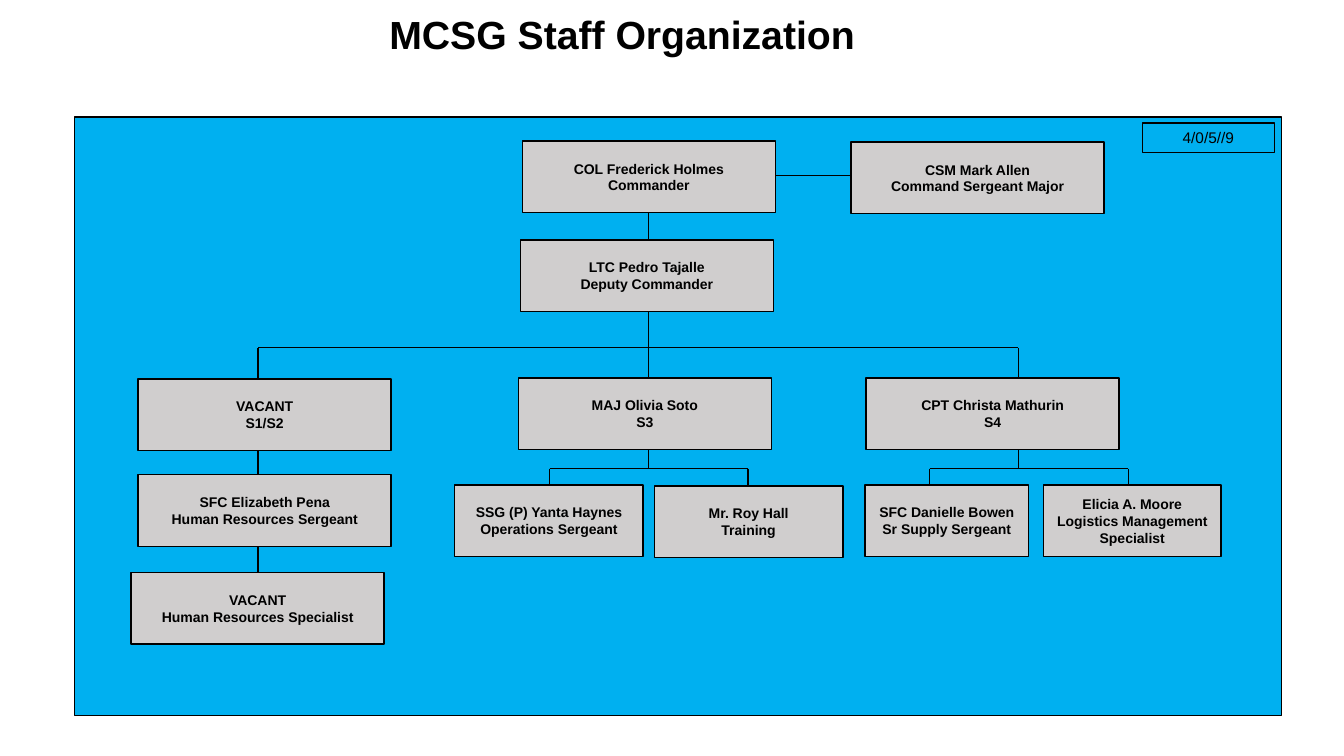
from lxml import etree
from pptx import Presentation
from pptx.dml.color import RGBColor
from pptx.enum.shapes import MSO_CONNECTOR, MSO_SHAPE
from pptx.enum.text import MSO_ANCHOR, PP_ALIGN
from pptx.oxml.ns import qn
from pptx.util import Inches, Pt

RECTANGLE = MSO_SHAPE.RECTANGLE
STRAIGHT = MSO_CONNECTOR.STRAIGHT
CENTER = PP_ALIGN.CENTER
MIDDLE, TOP = MSO_ANCHOR.MIDDLE, MSO_ANCHOR.TOP

COLORS = {"ink": "000000", "panel": "00B0F0", "box": "D0CECE"}
FORMATS = {
    "title": {"name": "Arial", "size": Pt(28), "bold": True},
    "box": {"name": "Arial", "size": Pt(10), "bold": True},
    "date": {"name": "Arial", "size": Pt(11), "bold": False},
}
BOX_WIDTH, BOX_HEIGHT = 2.51, 0.71
TITLE_BOX = (0, 0, 12.34, 0.67)
PANEL_BOX = (0.74, 1.16, 11.97, 5.94)

# Positions below are measured from the panel's top left corner
TRUNK_TOP, BRANCH_TOP, BRANCH_BOTTOM = 2.29, 3.49, 3.65
S1_AXIS, S3_AXIS, S4_AXIS = 1.82, 5.69, 9.36
BRANCHES = [(4.71, 6.68), (8.48, 10.45)]
STAFF = [  # left, top, width, lines
    (4.44, 0.24, BOX_WIDTH, ["COL Frederick Holmes", "Commander"]),
    (4.42, 1.22, BOX_WIDTH, ["LTC Pedro Tajalle", "Deputy Commander"]),
    (7.70, 0.25, BOX_WIDTH, ["CSM Mark Allen", "Command Sergeant Major"]),
    (0.63, 2.60, BOX_WIDTH, ["VACANT", "S1/S2"]),
    (0.63, 3.55, BOX_WIDTH, ["SFC Elizabeth Pena", "Human Resources Sergeant"]),
    (0.56, 4.52, BOX_WIDTH, ["VACANT", "Human Resources Specialist"]),
    (4.40, 2.59, BOX_WIDTH, ["MAJ Olivia Soto", "S3"]),
    (3.77, 3.65, 1.87, ["SSG (P) Yanta Haynes Operations Sergeant"]),
    (5.75, 3.66, 1.87, ["Mr. Roy Hall", "Training"]),
    (7.85, 2.59, BOX_WIDTH, ["CPT Christa Mathurin", "S4"]),
    (7.84, 3.65, 1.62, ["SFC Danielle Bowen", "Sr Supply Sergeant"]),
    (9.61, 3.65, 1.76, ["Elicia A. Moore", "Logistics Management Specialist"]),
]


def color(name):
    return RGBColor.from_string(COLORS[name])


def write_text(shape, lines, style, anchor=MIDDLE):
    frame = shape.text_frame
    frame.word_wrap = True
    frame.vertical_anchor = anchor
    for index, line in enumerate(lines):
        paragraph = frame.add_paragraph() if index else frame.paragraphs[0]
        paragraph.alignment = CENTER
        run = paragraph.add_run()
        run.text = line
        for attribute, value in FORMATS[style].items():
            setattr(run.font, attribute, value)
        run.font.color.rgb = color("ink")


def add_box(slide, box, fill=None, line_width=1):
    shape = slide.shapes.add_shape(RECTANGLE, *map(Inches, box))
    shape.shadow.inherit = False
    if fill:
        shape.fill.solid()
        shape.fill.fore_color.rgb = color(fill)
    else:
        shape.fill.background()
    shape.line.color.rgb = color("ink")
    shape.line.width = Pt(line_width)
    return shape


def add_line(slide, origin, start, end):
    left, top = origin
    points = (left + start[0], top + start[1], left + end[0], top + end[1])
    connector = slide.shapes.add_connector(STRAIGHT, *map(Inches, points))
    connector.line.color.rgb = color("ink")
    connector.line.width = Pt(1)
    properties = connector._element.find(qn("p:spPr"))
    etree.SubElement(properties, qn("a:effectLst"))


def add_title(slide, box):
    title = slide.shapes.title
    title.left, title.top, title.width, title.height = map(Inches, box)
    write_text(title, ["MCSG Staff Organization"], "title")


def add_reporting_lines(slide, origin):
    lines = [
        ((S4_AXIS, TRUNK_TOP), (S4_AXIS, BRANCH_TOP)),
        ((S1_AXIS, TRUNK_TOP), (S1_AXIS, 4.6)),
        ((S3_AXIS, 0.92), (S3_AXIS, BRANCH_TOP)),
        ((5.66, 0.58), (9.31, 0.58)),
        ((S1_AXIS, TRUNK_TOP), (S4_AXIS, TRUNK_TOP)),
    ]
    # Each branch is a bar with a drop at both ends
    for left, right in BRANCHES:
        lines.append(((left, BRANCH_TOP), (right, BRANCH_TOP)))
        for end in (left, right):
            lines.append(((end, BRANCH_TOP), (end, BRANCH_BOTTOM)))
    for start, end in lines:
        add_line(slide, origin, start, end)


def add_organization_chart(slide, box):
    add_box(slide, box, "panel")
    left, top = box[:2]
    add_reporting_lines(slide, (left, top))

    # Staff boxes
    for x, y, width, lines in STAFF:
        shape = add_box(slide, (left + x, top + y, width, BOX_HEIGHT), "box")
        write_text(shape, lines, "box")

    # Date
    date = add_box(slide, (left + 10.59, top + 0.06, 1.31, 0.29), line_width=0.75)
    write_text(date, ["4/0/5//9"], "date", TOP)


def main():
    presentation = Presentation()
    presentation.slide_width = Inches(13.33)
    presentation.slide_height = Inches(7.5)
    slide = presentation.slides.add_slide(presentation.slide_layouts[5])
    add_title(slide, TITLE_BOX)
    add_organization_chart(slide, PANEL_BOX)
    presentation.save("out.pptx")


if __name__ == "__main__":
    main()
